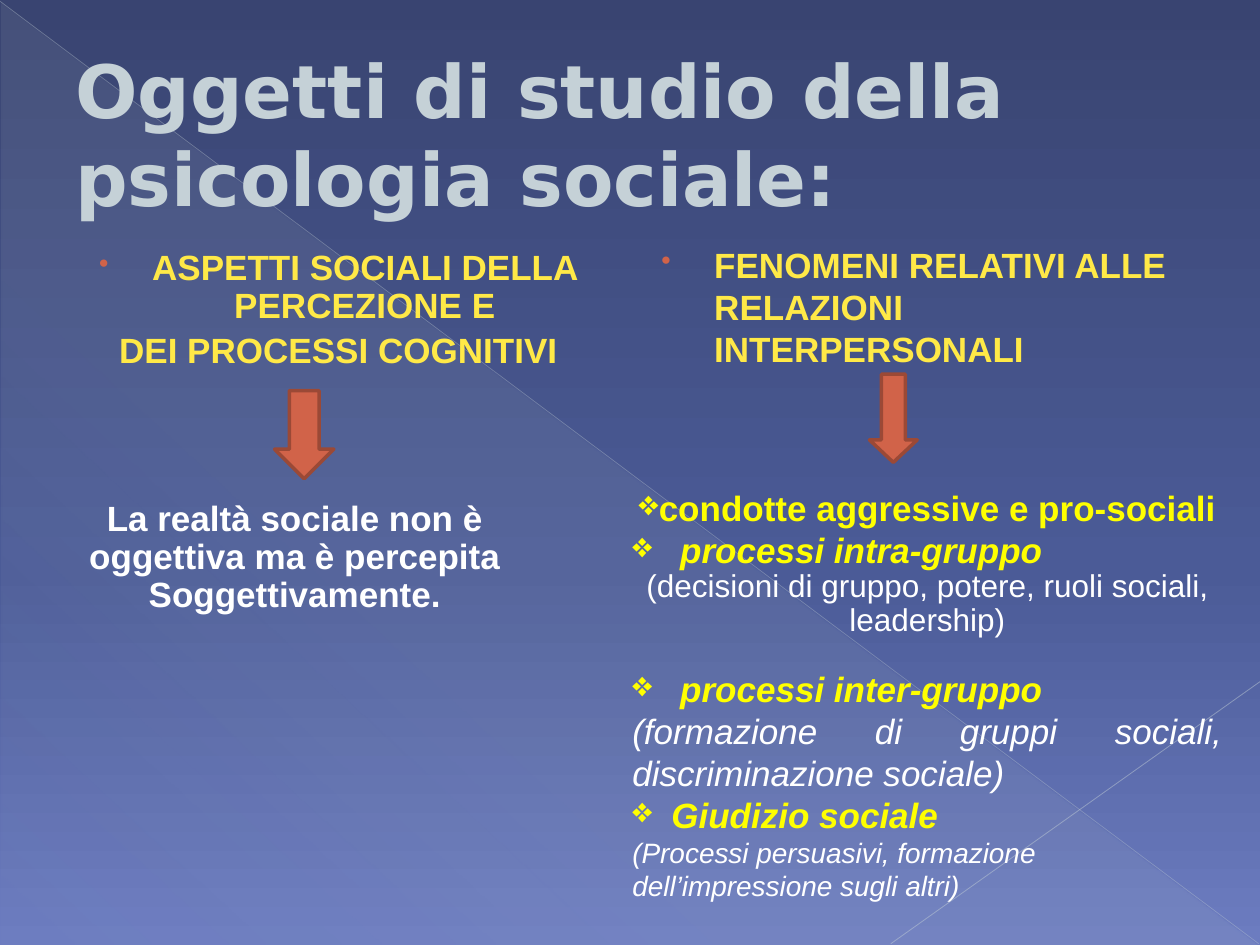
from lxml.etree import SubElement
from pptx import Presentation
from pptx.dml.color import RGBColor
from pptx.enum.shapes import MSO_CONNECTOR, MSO_SHAPE
from pptx.enum.text import MSO_ANCHOR, PP_ALIGN as AL
from pptx.oxml.ns import qn
from pptx.util import Inches, Pt

THEME = dict(
    title="C5D1D7", heading="FFE947", topic="FFFF00", text="FFFFFF",
    accent="D16349", edge="9B4936", glow="C5D1D7",
    sky=[(0, "394471", 100), (60, "4B5B97", 100), (100, "6C7CC0", 100)],
    veil=[(0, "C5D1D7", 10), (70, "C5D1D7", 8), (100, "C5D1D7", 1)],
    title_font="DejaVu Sans", font="Arial",
    title_size=42, size=20, detail=18, small=16,
)

HEADING = dict(color="heading", bold=True, indent=0.49, hang=0.42, before=4)
LEFT_HEADING = dict(HEADING, align=AL.CENTER, spacing=0.9)
NOTE = dict(bold=True, align=AL.CENTER, spacing=0.9)
TOPIC = dict(color="topic", bold=True, bullet="❖")
PROCESS = dict(TOPIC, italic=True, align=AL.JUSTIFY, indent=0.38, hang=0.38)
DOT = dict(bullet="•", bullet_color="accent", bullet_size=80)

TEXTS = [
    ((0.5, 0.29, 9, 1.53), MSO_ANCHOR.MIDDLE, [
        ("Oggetti di studio della psicologia sociale:",
         dict(color="title", font="title_font", size="title_size", bold=True))]),
    ((0.44, 1.94, 4.42, 1.1), MSO_ANCHOR.TOP, [
        ("ASPETTI SOCIALI DELLA PERCEZIONE E", dict(LEFT_HEADING, **DOT)),
        ("DEI PROCESSI COGNITIVI", LEFT_HEADING)]),
    ((5.08, 1.88, 4.42, 1.1), MSO_ANCHOR.TOP, [
        ("FENOMENI RELATIVI ALLE RELAZIONI INTERPERSONALI", dict(HEADING, **DOT))]),
    ((0.23, 3.93, 4.22, 1.1), MSO_ANCHOR.TOP, [
        ("La realtà sociale non è oggettiva ma è percepita", NOTE),
        ("Soggettivamente.", NOTE)]),
    ((4.92, 3.81, 4.88, 3.46), MSO_ANCHOR.TOP, [
        ("condotte aggressive e pro-sociali", dict(TOPIC, align=AL.CENTER)),
        ("processi intra-gruppo", PROCESS),
        ("(decisioni di gruppo, potere, ruoli sociali, leadership)",
         dict(size="detail", align=AL.CENTER, spacing=0.9)),
        ("processi inter-gruppo", dict(PROCESS, before=16.6)),
        ("(formazione di gruppi sociali, discriminazione sociale)",
         dict(italic=True, align=AL.JUSTIFY)),
        ("Giudizio sociale", dict(PROCESS, indent=0.31, hang=0.31)),
        ("(Processi persuasivi, formazione dell’impressione sugli altri)",
         dict(size="small", italic=True))]),
]
ARROWS = [((2.18, 3.1, 0.47, 0.7), 0.5), ((6.9, 2.97, 0.38, 0.7), 0.47)]
RAYS = [((0, 0.01, 9.99, 7.49), 0.39, 35), ((10, 5.41, 7.07, 7.49), 0.47, 45)]


def rgb(name):
    return RGBColor.from_string(THEME[name])


def inches(values):
    return [Inches(v) for v in values]


def set_alpha(clr, percent):
    SubElement(clr, qn("a:alpha"), val=str(percent * 1000))


def set_gradient(fill, element, stops, angle):
    fill.gradient()
    grad = element.find(".//" + qn("a:gradFill"))
    for child in list(grad):
        grad.remove(child)
    gs_list = SubElement(grad, qn("a:gsLst"))
    for pos, color, opacity in stops:
        gs = SubElement(gs_list, qn("a:gs"), pos=str(pos * 1000))
        set_alpha(SubElement(gs, qn("a:srgbClr"), val=color), opacity)
    SubElement(grad, qn("a:lin"), ang=str(angle * 60000), scaled="0")


def add_paragraph(p, text, color="text", font="font", size="size", bold=False,
                  italic=False, align=AL.LEFT, spacing=1.0, before=0, indent=0,
                  hang=0, bullet=None, bullet_color=None, bullet_size=100):
    p.alignment, p.line_spacing, p.space_before = align, spacing, Pt(before)
    r = p.add_run()
    r.text = text
    r.font.name, r.font.size = THEME[font], Pt(THEME[size])
    r.font.bold, r.font.italic = bold, italic
    r.font.color.rgb = rgb(color)
    props = p._p.get_or_add_pPr()
    props.set("marL", str(Inches(indent)))
    props.set("indent", str(-Inches(hang)))
    if bullet:
        clr = SubElement(props, qn("a:buClr"))
        SubElement(clr, qn("a:srgbClr"), val=THEME[bullet_color or color])
        SubElement(props, qn("a:buSzPct"), val=str(bullet_size * 1000))
        SubElement(props, qn("a:buChar"), char=bullet)


def add_text(s, box, anchor, paragraphs):
    tf = s.shapes.add_textbox(*inches(box)).text_frame
    tf.word_wrap, tf.vertical_anchor = True, anchor
    for i, (text, style) in enumerate(paragraphs):
        add_paragraph(tf.add_paragraph() if i else tf.paragraphs[0], text, **style)


def add_ray(s, ends, width, opacity):
    line = s.shapes.add_connector(MSO_CONNECTOR.STRAIGHT, *inches(ends))
    line.line.width, line.line.color.rgb = Pt(width), rgb("glow")
    set_alpha(line.element.spPr.find(".//" + qn("a:srgbClr")), opacity)
    SubElement(line.element.spPr, qn("a:effectLst"))


def add_arrow(s, box, head):
    sp = s.shapes.add_shape(MSO_SHAPE.DOWN_ARROW, *inches(box))
    sp.shadow.inherit = False
    sp.adjustments[1] = head
    sp.fill.solid()
    sp.fill.fore_color.rgb = rgb("accent")
    sp.line.color.rgb, sp.line.width = rgb("edge"), Pt(2)


def main():
    """Build the slide on the subjects of social psychology."""
    prs = Presentation()
    prs.slide_width, prs.slide_height = Inches(10), Inches(7.5)
    s = prs.slides.add_slide(prs.slide_layouts[6])
    set_gradient(s.background.fill, s.element, THEME["sky"], 90)
    veil = s.shapes.add_shape(MSO_SHAPE.RIGHT_TRIANGLE, *inches((0.01, 0.02, 9.98, 7.48)))
    veil.shadow.inherit = False
    veil.line.fill.background()
    set_gradient(veil.fill, veil.element, THEME["veil"], 133)
    for ray in RAYS:
        add_ray(s, *ray)
    for block in TEXTS:
        add_text(s, *block)
    for arrow in ARROWS:
        add_arrow(s, *arrow)
    prs.save("out.pptx")


if __name__ == "__main__":
    main()
